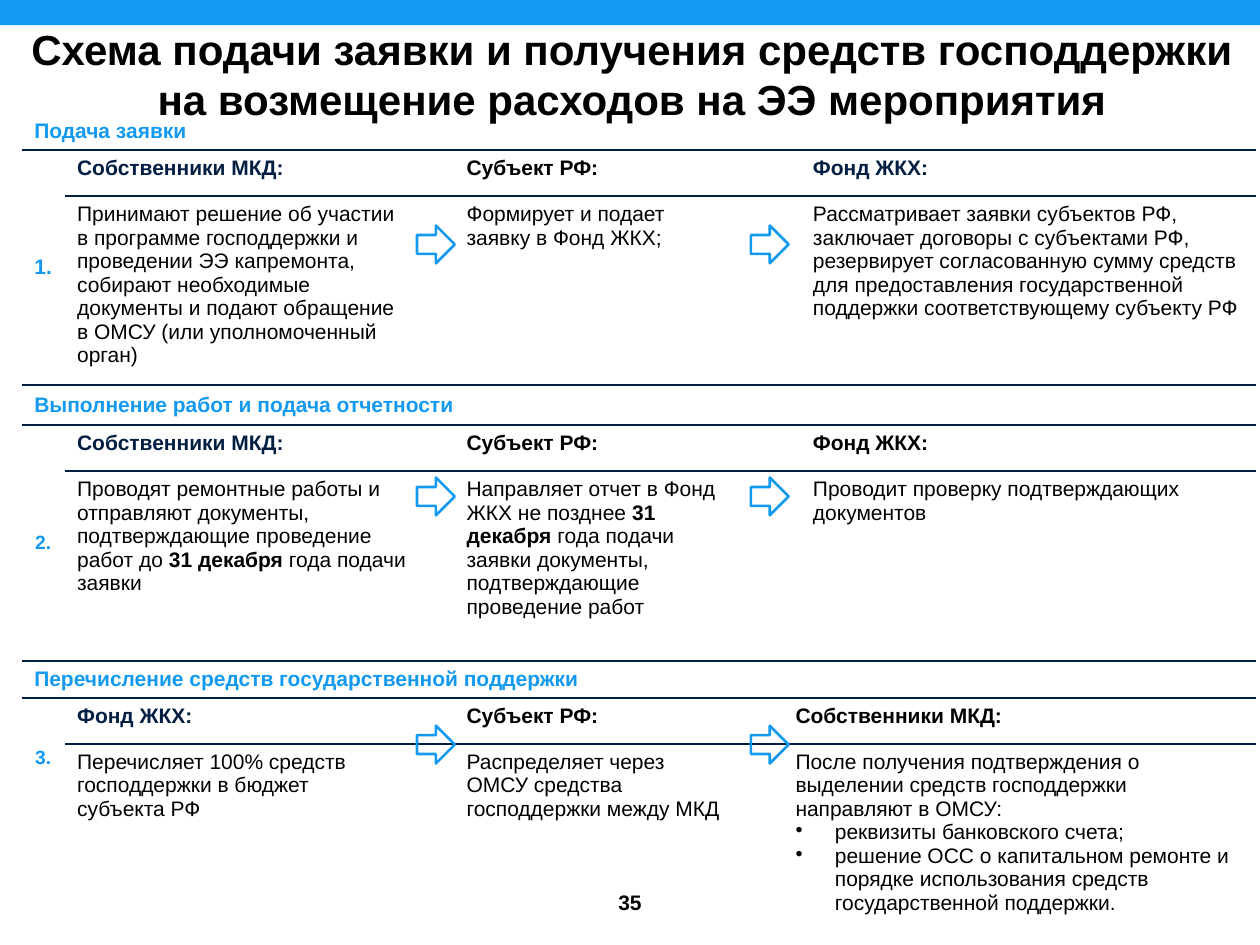
from itertools import accumulate

from lxml import etree
from pptx import Presentation
from pptx.dml.color import RGBColor
from pptx.enum import shapes, text
from pptx.oxml.ns import qn
from pptx.util import Pt

BLUE = RGBColor(0x13, 0x9A, 0xF0)
NAVY = RGBColor(0x02, 0x1F, 0x43)
BLACK = RGBColor(0, 0, 0)

COLS = [24.5, 193, 9.4, 20.2, 139, 23.8, 25.2, 10, 260.5]
ROWS = [21.7, 26.3, 108, 22.9, 26.3, 108.5, 21.2, 26.3, 130]
ARROW_X = [238.3, 429.1]
ARROW_Y = [128.9, 272.9, 414.7]

# Each stage: heading, number, number size, column spans, and per party
# (name, colour, paragraphs); a paragraph alternates regular and bold runs
STAGES = [
    ("Подача заявки", "1.", 12, [(1, 2), (3, 3), (4, 4), (5, 7), (8, 8)], [
        ("Собственники МКД:", NAVY, [[
            "Принимают решение об участии в программе господдержки и проведении "
            "ЭЭ капремонта, собирают необходимые документы и подают обращение "
            "в ОМСУ (или уполномоченный орган)"]]),
        ("Субъект РФ:", BLACK, [["Формирует и подает заявку в Фонд ЖКХ;"]]),
        ("Фонд ЖКХ:", NAVY, [[
            "Рассматривает заявки субъектов РФ, заключает договоры с субъектами "
            "РФ, резервирует согласованную сумму средств для предоставления "
            "государственной поддержки соответствующему субъекту РФ"]]),
    ]),
    ("Выполнение работ и подача отчетности", "2.", 11,
     [(1, 2), (3, 3), (4, 5), (6, 7), (8, 8)], [
        ("Собственники МКД:", NAVY, [[
            "Проводят ремонтные работы и отправляют документы, подтверждающие "
            "проведение работ до ", "31 декабря ", "года подачи заявки"]]),
        ("Субъект РФ:", BLACK, [[
            "Направляет отчет в Фонд ЖКХ не позднее ", "31 декабря ",
            "года подачи заявки документы, подтверждающие проведение работ"]]),
        ("Фонд ЖКХ:", BLACK, [["Проводит проверку подтверждающих документов"]]),
    ]),
    ("Перечисление средств государственной поддержки", "3.", 11,
     [(1, 1), (2, 3), (4, 5), (6, 6), (7, 8)], [
        ("Фонд ЖКХ:", NAVY, [[
            "Перечисляет 100% средств господдержки в бюджет субъекта РФ"]]),
        ("Субъект РФ:", BLACK, [[
            "Распределяет через ОМСУ средства господдержки между МКД"]]),
        ("Собственники МКД:", BLACK, [
            ["После получения подтверждения о выделении средств господдержки "
             "направляют в ОМСУ:"],
            ["реквизиты банковского счета;"],
            ["решение ОСС о капитальном ремонте и порядке использования средств "
             "государственной поддержки."]]),
    ]),
]


def set_font(p, size, color, bold):
    p.font.name = "Arial"
    p.font.size = Pt(size)
    p.font.color.rgb = color
    p.font.bold = bold


def add_bullet(p):
    pPr = p._p.get_or_add_pPr()
    pPr.set("marL", str(Pt(22.5)))
    pPr.set("indent", str(Pt(-22.5)))
    bullet = etree.Element(qn("a:buChar"), char="•")
    # Bullets come before the default run properties
    pPr.insert(list(pPr).index(pPr.find(qn("a:defRPr"))), bullet)


def write(cell, words, size, color, bold=True):
    p = cell.text_frame.paragraphs[0]
    p.text = words
    set_font(p, size, color, bold)
    return p


def write_body(cell, paragraphs):
    tf = cell.text_frame
    for i, runs in enumerate(paragraphs):
        p = tf.paragraphs[0] if i == 0 else tf.add_paragraph()
        set_font(p, 12, BLACK, False)
        for j, words in enumerate(runs):
            r = p.add_run()
            r.text = words
            if j % 2:
                r.font.bold = True
        if i:
            add_bullet(p)


def rule_below(table, row):
    """Draw one horizontal line between a row and the next."""
    for r, side in ((row, "a:lnB"), (row + 1, "a:lnT")):
        for col in range(len(COLS)):
            tcPr = table.cell(r, col)._tc.get_or_add_tcPr()
            ln = etree.Element(qn(side), w=str(Pt(1)))
            fill = etree.SubElement(ln, qn("a:solidFill"))
            etree.SubElement(fill, qn("a:srgbClr"), val=str(NAVY))
            # Top precedes bottom, and both precede the fill
            tcPr.insert(len(tcPr.findall(qn("a:lnT"))), ln)


def add_stage(table, top, stage):
    heading, number, size, spans, parties = stage
    head = table.cell(top, 0)
    head.merge(table.cell(top, len(COLS) - 1))
    head.vertical_anchor = text.MSO_ANCHOR.MIDDLE
    write(head, heading, 12, BLUE)

    # Stage number beside both rows
    num = table.cell(top + 1, 0)
    num.merge(table.cell(top + 2, 0))
    num.margin_left = num.margin_right = 0
    if number == "3.":
        num.margin_top = Pt(28)
    else:
        num.vertical_anchor = text.MSO_ANCHOR.MIDDLE
    write(num, number, size, BLUE).alignment = text.PP_ALIGN.CENTER

    # Parties stand in every other span, arrows between them
    for i, (first, last) in enumerate(spans):
        for row in (top + 1, top + 2):
            if last > first:
                table.cell(row, first).merge(table.cell(row, last))
        if i % 2 == 0:
            name, color, body = parties[i // 2]
            write(table.cell(top + 1, first), name, 12, color)
            write_body(table.cell(top + 2, first), body)


def add_stages(s, x, y, w, h):
    table = s.shapes.add_table(len(ROWS), len(COLS), Pt(x), Pt(y), Pt(w), Pt(h)).table
    table.first_row = table.horz_banding = False
    # The plain style has no grid
    style = table._tbl.tblPr.find(qn("a:tableStyleId"))
    style.text = "{2D5ABB26-0587-4C30-8999-92F81FD0307C}"
    for col, width in zip(table.columns, COLS):
        col.width = Pt(width)
    for row, height in zip(table.rows, ROWS):
        row.height = Pt(height)
    for cell in table.iter_cells():
        cell.fill.background()
        cell.text_frame.paragraphs[0].font.size = Pt(12)
    for i, stage in enumerate(STAGES):
        add_stage(table, 3 * i, stage)
    for row in (0, 2, 3, 5, 6):
        rule_below(table, row)


def add_arrow(s, x, y, w, h):
    sp = s.shapes.add_shape(shapes.MSO_SHAPE.RIGHT_ARROW, Pt(x), Pt(y), Pt(w), Pt(h))
    sp.shadow.inherit = False
    sp.fill.background()
    sp.line.color.rgb = BLUE
    sp.line.width = Pt(1.5)


def add_bar(s, x, y, w, h):
    sp = s.shapes.add_shape(shapes.MSO_SHAPE.RECTANGLE, Pt(x), Pt(y), Pt(w), Pt(h))
    sp.shadow.inherit = False
    sp.fill.solid()
    sp.fill.fore_color.rgb = BLUE
    sp.line.fill.background()


def add_words(sp, words, size, x, y, w, h):
    sp.left, sp.top, sp.width, sp.height = Pt(x), Pt(y), Pt(w), Pt(h)
    tf = sp.text_frame
    tf.word_wrap = True
    tf.auto_size = text.MSO_AUTO_SIZE.NONE
    tf.vertical_anchor = text.MSO_ANCHOR.MIDDLE
    p = write(sp, words, size, BLACK)
    p.alignment = text.PP_ALIGN.CENTER


def main():
    prs = Presentation()
    prs.slide_width, prs.slide_height = Pt(720), Pt(540)
    s = prs.slides.add_slide(prs.slide_layouts[5])

    # Bar, page number and title
    add_bar(s, 0, 0, 720, 14.4)
    add_words(s.shapes.add_textbox(0, 0, 0, 0), "35", 12, 328.3, 501.8, 63.4, 28)
    add_words(s.shapes.title, "Схема подачи заявки и получения средств господдержки "
              "на возмещение расходов на ЭЭ мероприятия", 24, 2.2, 9.4, 717.8, 65.5)

    # Three stages with arrows between the parties
    add_stages(s, 12.4, 64.1, sum(COLS), sum(ROWS))
    for y in ARROW_Y:
        for x in ARROW_X:
            add_arrow(s, x, y, 21.6, 21.6)
    prs.save("out.pptx")


if __name__ == "__main__":
    main()
